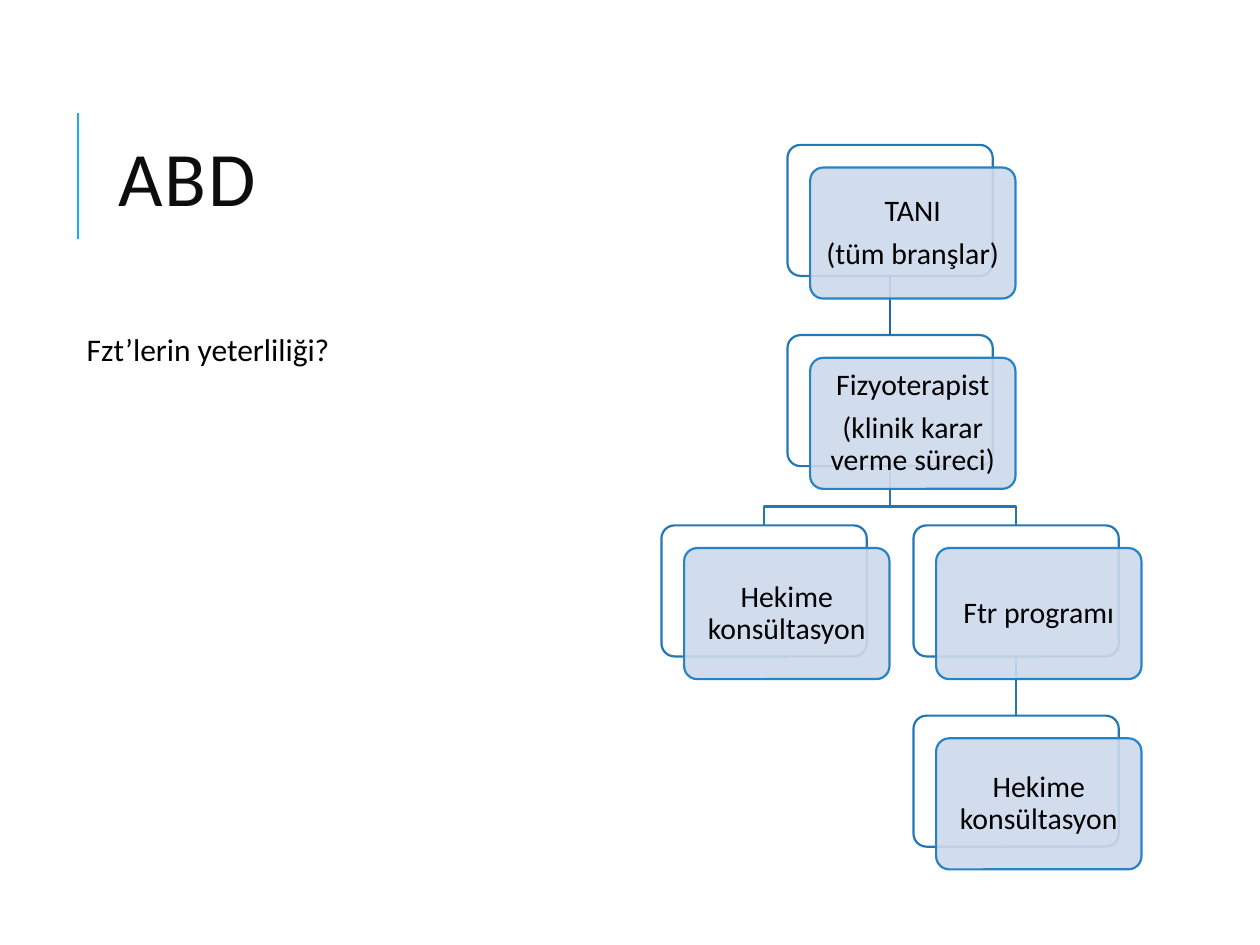
from lxml import etree
from pptx import Presentation
from pptx.dml.color import RGBColor
from pptx.enum.shapes import MSO_CONNECTOR, MSO_SHAPE
from pptx.enum.text import MSO_ANCHOR, PP_ALIGN
from pptx.oxml.ns import qn
from pptx.util import Inches, Pt

STRAIGHT = MSO_CONNECTOR.STRAIGHT
ROUND = MSO_SHAPE.ROUNDED_RECTANGLE
MIDDLE = MSO_ANCHOR.MIDDLE
CENTER = PP_ALIGN.CENTER

HEX = {"accent": "1CADE4", "title": "0D0D0D", "text": "000000", "back": "FFFFFF",
       "card": "CDD9EA", "edge": "2683C6", "link": "2277B4", "stem": "1E699F"}
RGB = {name: RGBColor.from_string(code) for name, code in HEX.items()}

prs = Presentation()
prs.slide_width, prs.slide_height = Inches(10), Inches(7.5)
slide = prs.slides.add_slide(prs.slide_layouts[6])
shapes = slide.shapes


def write(frame, lines, size, color, **form):
    """Fill a text frame, one paragraph per line, with paragraph formats."""
    frame.word_wrap = True
    for i, line in enumerate(lines):
        para = frame.paragraphs[0] if i == 0 else frame.add_paragraph()
        for key, value in form.items():
            setattr(para, key, value)
        run = para.add_run()
        run.text = line
        font = {"name": "Calibri", "size": Pt(size)}
        for key, value in font.items():
            setattr(run.font, key, value)
        run.font.color.rgb = RGB[color]


def join(x1, y1, x2, y2, color, width):
    """Add a straight line without a shadow."""
    line = shapes.add_connector(STRAIGHT, *map(Inches, (x1, y1, x2, y2)))
    line.line.color.rgb = RGB[color]
    line.line.width = Pt(width)
    etree.SubElement(line._element.spPr, qn("a:effectLst"))
    return line


# Title and question
join(0.62, 1.9, 0.62, 0.9, "accent", 1.5)
title = shapes.add_textbox(Inches(0.84), Inches(0.64), Inches(7.97), Inches(1.64))
title.text_frame.vertical_anchor = MIDDLE
write(title.text_frame, ["ABD"], 44, "title", line_spacing=0.8)
title.text_frame.paragraphs[0].runs[0]._r.get_or_add_rPr().set("spc", "100")
note = shapes.add_textbox(Inches(0.59), Inches(2.57), Inches(3.86), Inches(0.71))
write(note.text_frame, ["Fzt’lerin yeterliliği?"], 18, "text")

# Chart of cards: column in half steps from the middle, row, lines of text
WIDE, HIGH = 1.63, 1.04
LEFT, TOP = 6.25, 1.15
STEP_X, STEP_Y = 1, 1.51
SHIFT = 0.18
cards = [
    (0, 0, ["TANI", "(tüm branşlar)"]),
    (0, 1, ["Fizyoterapist", "(klinik karar verme süreci)"]),
    (-1, 2, ["Hekime konsültasyon"]),
    (1, 2, ["Ftr programı"]),
    (1, 3, ["Hekime konsültasyon"]),
]

# Back cards
backs = []
for col, row, _ in cards:
    x, y = LEFT + col * STEP_X, TOP + row * STEP_Y
    back = shapes.add_shape(ROUND, Inches(x), Inches(y), Inches(WIDE), Inches(HIGH))
    back.adjustments[0] = 0.1
    back.shadow.inherit = False
    back.fill.solid()
    back.fill.fore_color.rgb = RGB["back"]
    back.line.color.rgb = RGB["link"]
    back.line.width = Pt(1.25)
    backs.append(back)

# Links between back cards
for top, low, color in [(0, 1, "stem"), (3, 4, "link")]:
    link = join(0, 0, 1, 1, color, 1.25)
    link.begin_connect(backs[top], 2)
    link.end_connect(backs[low], 0)

mid = LEFT + WIDE / 2
start, end = TOP + STEP_Y + HIGH, TOP + 2 * STEP_Y
bend = end - 0.15
for side in (1, -1):
    far = mid + side * STEP_X
    pen = shapes.build_freeform(Inches(mid), Inches(start))
    points = [(mid, bend), (far, bend), (far, end)]
    pen.add_line_segments([(Inches(x), Inches(y)) for x, y in points], close=False)
    branch = pen.convert_to_shape()
    branch.shadow.inherit = False
    branch.fill.background()
    branch.line.color.rgb = RGB["link"]
    branch.line.width = Pt(1.25)

# Front cards with text
for back, (_, _, lines) in zip(backs, cards):
    card = shapes.add_shape(ROUND, back.left + Inches(SHIFT), back.top + Inches(SHIFT),
                            back.width, back.height)
    card.adjustments[0] = 0.1
    card.shadow.inherit = False
    card.fill.solid()
    card.fill.fore_color.rgb = RGB["card"]
    tone = card._element.spPr.find(qn("a:solidFill"))[0]
    etree.SubElement(tone, qn("a:alpha"), val="90000")
    card.line.color.rgb = RGB["edge"]
    card.line.width = Pt(1.25)
    frame = card.text_frame
    frame.vertical_anchor = MIDDLE
    for edge in ("left", "top", "right", "bottom"):
        setattr(frame, "margin_" + edge, Inches(0.07))
    write(frame, lines, 17, "text", alignment=CENTER, line_spacing=0.9, space_after=Pt(6))

prs.save("out.pptx")
